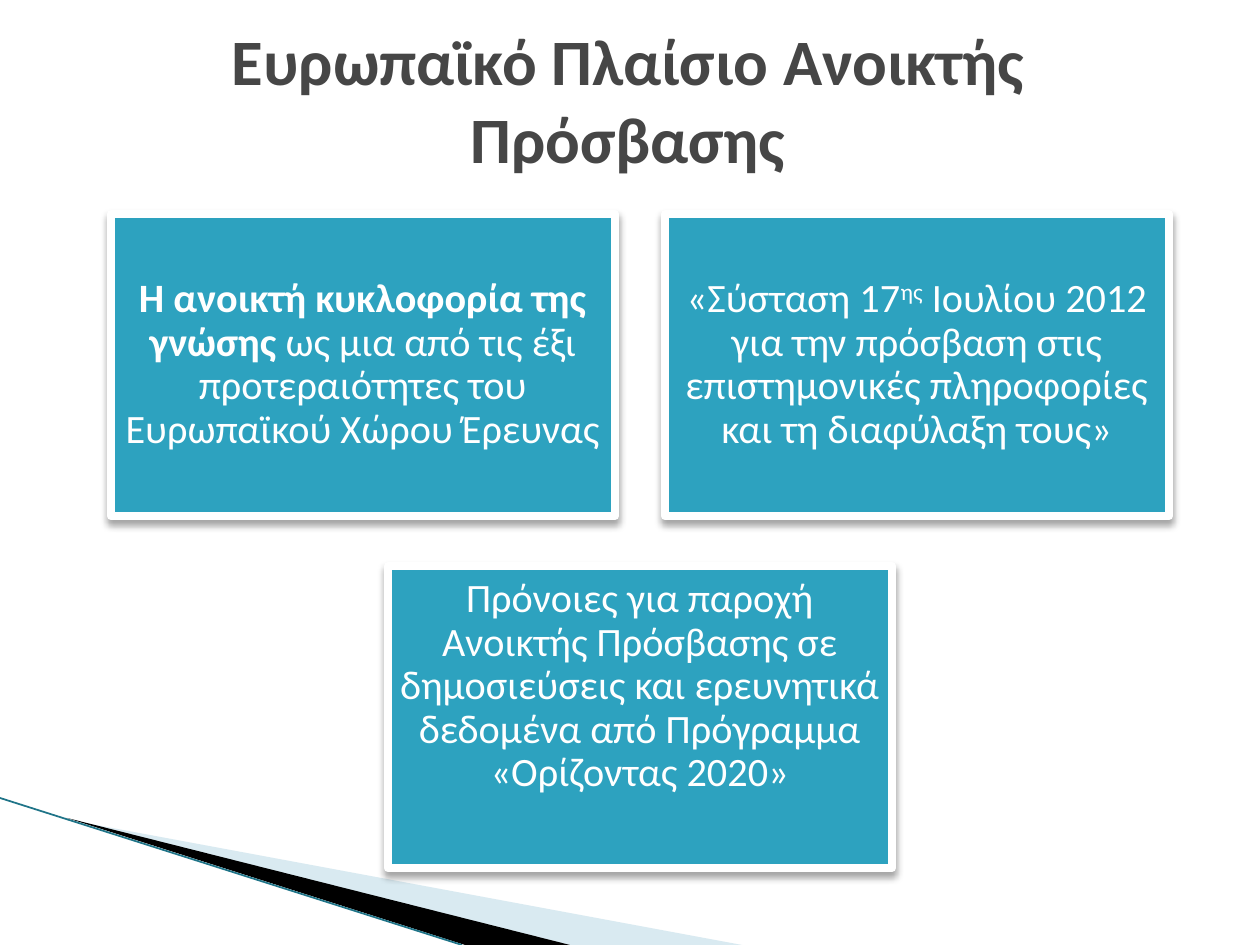
from lxml import etree
from pptx import Presentation
from pptx import util as u
from pptx.dml.color import RGBColor
from pptx.enum import shapes, text
from pptx.oxml import parse_xml
from pptx.oxml.ns import nsdecls, qn

WHITE = RGBColor(0xFF, 0xFF, 0xFF)
BLACK = RGBColor(0, 0, 0)
GREY = RGBColor(0x46, 0x46, 0x46)
TEAL = RGBColor(0x2D, 0xA2, 0xBF)
PALE = RGBColor(0xA0, 0xCB, 0xDC)
EDGE = RGBColor(0x1F, 0x74, 0x88)
SCALE = 914400 / 126
SHADOW = (
    f'<a:effectLst {nsdecls("a")}>'
    '<a:outerShdw blurRad="50800" dist="38100" dir="5400000" rotWithShape="0">'
    '<a:srgbClr val="000000"><a:alpha val="35000"/></a:srgbClr>'
    '</a:outerShdw></a:effectLst>'
)


def px(n):
    return u.Emu(round(n * SCALE))


def style(run, size, color, bold):
    run.font.name = "Calibri"
    run.font.size = u.Pt(size)
    run.font.color.rgb = color
    run.font.bold = bold


deck = Presentation()
deck.slide_width, deck.slide_height = px(1260), px(945)
slide = deck.slides.add_slide(deck.slide_layouts[5])

wedges = [
    ([(69, 820), (742, 945), (570, 945)], PALE, 40),
    ([(67, 818), (570, 945), (465, 945)], BLACK, 100),
]
for points, color, alpha in wedges:
    form = slide.shapes.build_freeform(*points[0], scale=SCALE)
    form.add_line_segments(points[1:], close=True)
    wedge = form.convert_to_shape()
    wedge.shadow.inherit = False
    wedge.fill.solid()
    wedge.fill.fore_color.rgb = color
    wedge.line.fill.background()
    if alpha < 100:
        tint = wedge.fill._xPr.find(qn("a:solidFill"))[0]
        etree.SubElement(tint, qn("a:alpha")).set("val", str(alpha * 1000))

edge = slide.shapes.add_connector(
    shapes.MSO_CONNECTOR.STRAIGHT, px(0), px(798), px(462), px(945))
edge.line.color.rgb = EDGE
edge.line.width = u.Pt(1)
etree.SubElement(edge._element.spPr, qn("a:effectLst"))

MIDDLE, TOP = text.MSO_ANCHOR.MIDDLE, text.MSO_ANCHOR.TOP
WIDE, HIGH, GAP = 504, 302, 50
LEFT, UP, STEP = 111, 214, 554
cards = [
    (0, 0, MIDDLE, [
        ("Η ανοικτή κυκλοφορία της γνώσης ", True, False),
        ("ως μια από τις έξι προτεραιότητες του Ευρωπαϊκού Χώρου Έρευνας",
         False, False)]),
    (1, 0, MIDDLE, [
        ("«Σύσταση 17", False, False),
        ("ης", False, True),
        (" Ιουλίου 2012 για την πρόσβαση στις επιστημονικές πληροφορίες "
         "και τη διαφύλαξη τους»", False, False)]),
    (0.5, 1, TOP, [
        ("Πρόνοιες για παροχή Ανοικτής Πρόσβασης σε δημοσιεύσεις και "
         "ερευνητικά δεδομένα από Πρόγραμμα «Ορίζοντας 2020»",
         False, False)]),
]
for col, row, anchor, parts in cards:
    card = slide.shapes.add_shape(
        shapes.MSO_SHAPE.RECTANGLE,
        px(LEFT + col * STEP), px(UP + row * (HIGH + GAP)), px(WIDE), px(HIGH))
    card.fill.solid()
    card.fill.fore_color.rgb = TEAL
    card.line.color.rgb = WHITE
    card.line.width = u.Pt(5)
    card._element.spPr.append(parse_xml(SHADOW))
    frame = card.text_frame
    frame.word_wrap = True
    frame.vertical_anchor = anchor
    frame.margin_left = frame.margin_right = px(12)
    frame.margin_top = frame.margin_bottom = px(12)
    para = frame.paragraphs[0]
    para.alignment = text.PP_ALIGN.CENTER
    para.line_spacing = 0.9
    for words, bold, raised in parts:
        run = para.add_run()
        run.text = words
        style(run, 23, WHITE, bold)
        if raised:
            run.font._element.set("baseline", "30000")

title = slide.shapes.title
title.left, title.top, title.width, title.height = px(64), px(26), px(1128), px(145)
frame = title.text_frame
frame.text = "Ευρωπαϊκό Πλαίσιο Ανοικτής Πρόσβασης"
frame.word_wrap = True
frame.auto_size = text.MSO_AUTO_SIZE.NONE
frame.vertical_anchor = MIDDLE
frame.paragraphs[0].alignment = text.PP_ALIGN.CENTER
style(frame.paragraphs[0].runs[0], 37, GREY, True)

deck.save("out.pptx")
